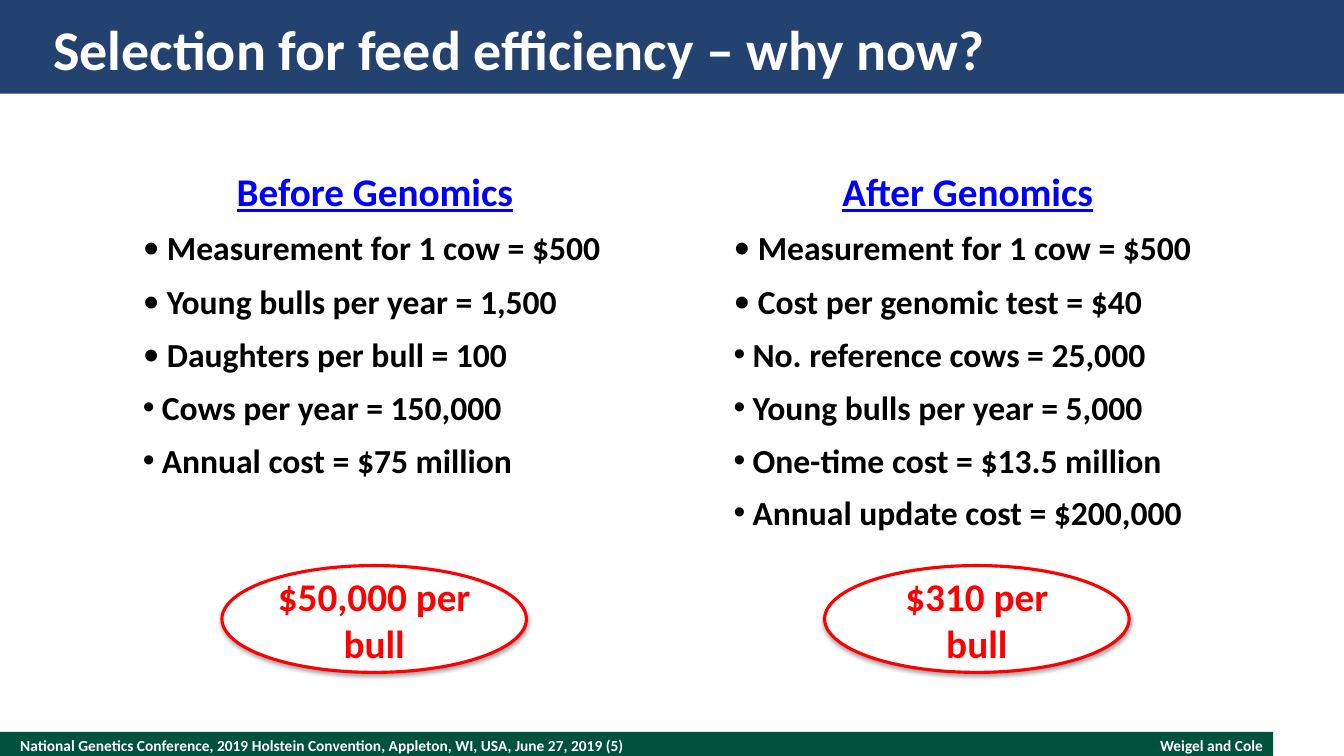
import pptx
import pptx.util
import pptx.oxml
import pptx.oxml.ns
import pptx.dml.color
import pptx.enum.shapes
import pptx.enum.text

Pt = pptx.util.Pt
ALIGN = pptx.enum.text.PP_ALIGN
ANCHOR = pptx.enum.text.MSO_ANCHOR
SHAPE = pptx.enum.shapes.MSO_SHAPE

COLORS = {"navy": "244270", "green": "00523C", "white": "FFFFFF",
          "blue": "0000FF", "black": "000000", "red": "FF0000"}
TITLE = "Selection for feed efficiency – why now?"
FOOTER_LEFT = ("National Genetics Conference, 2019 Holstein Convention, "
               "Appleton, WI, USA, June 27, 2019 (5)")
FOOTER_RIGHT = "Weigel and Cole"

# left and width of each list, its ellipse, and how many items have large bullets
COLUMNS = [
    {"heading": "Before Genomics", "left": 95, "width": 345.6,
     "large_bullets": 3, "ellipse_left": 158.5, "result": "$50,000 per bull",
     "items": ["Measurement for 1 cow = $500", "Young bulls per year = 1,500",
               "Daughters per bull = 100", "Cows per year = 150,000",
               "Annual cost = $75 million"]},
    {"heading": "After Genomics", "left": 517, "width": 348.5,
     "large_bullets": 2, "ellipse_left": 589, "result": "$310 per bull",
     "items": ["Measurement for 1 cow = $500", "Cost per genomic test = $40",
               "No. reference cows = 25,000", "Young bulls per year = 5,000",
               "One-time cost = $13.5 million", "Annual update cost = $200,000"]},
]
LIST_TOP, LINE_HEIGHT, ITEM_GAP, LAST_GAP = 116, 29.3, 9.2, 8
ELLIPSE_TOP, ELLIPSE_WIDTH, ELLIPSE_HEIGHT = 404, 217.5, 76.3
BULLETS = {"large": ("Calibri", 17.2), "small": ("Arial", 13.5)}

SHADOW = ('<a:outerShdw %s blurRad="39400" dist="22900" dir="5400000" rotWithShape="0">'
          '<a:srgbClr val="000000"><a:alpha val="35000"/></a:srgbClr></a:outerShdw>'
          % pptx.oxml.ns.nsdecls("a"))


def rgb(name):
    return pptx.dml.color.RGBColor.from_string(COLORS[name])


def write(para, text, size, color, **formats):
    span = para.add_run()
    span.text = text
    formats = {"name": "Calibri", "size": Pt(size), "bold": True, **formats}
    for key, value in formats.items():
        setattr(span.font, key, value)
    span.font.color.rgb = rgb(color)


def add_box(page, left, top, width, height, anchor=ANCHOR.MIDDLE, inset=(0, 0)):
    """Add a wrapping text box; inset is (horizontal, vertical)."""
    box = page.shapes.add_textbox(Pt(left), Pt(top), Pt(width), Pt(height))
    formats = {"word_wrap": True, "vertical_anchor": anchor,
               "margin_left": Pt(inset[0]), "margin_right": Pt(inset[0]),
               "margin_top": Pt(inset[1]), "margin_bottom": Pt(inset[1])}
    for key, value in formats.items():
        setattr(box.text_frame, key, value)
    return box


def add_line_of_text(page, place, text, size, align=ALIGN.LEFT):
    para = add_box(page, *place).text_frame.paragraphs[0]
    para.alignment = align
    write(para, text, size, "white")


def add_filled(page, kind, place, fill):
    shape = page.shapes.add_shape(kind, *map(Pt, place))
    shape.shadow.inherit = False
    shape.fill.solid()
    shape.fill.fore_color.rgb = rgb(fill)
    shape.line.fill.background()
    return shape


def set_bullet(para, style):
    font, indent = BULLETS[style]
    properties = para._p.get_or_add_pPr()
    properties.set("marL", str(Pt(indent)))
    properties.set("indent", str(-Pt(indent)))
    for tag, key, value in (("buFont", "typeface", font), ("buChar", "char", "•")):
        element = pptx.oxml.parse_xml(
            '<a:%s %s %s="%s"/>' % (tag, pptx.oxml.ns.nsdecls("a"), key, value))
        properties.append(element)


def add_list(page, column):
    items = column["items"]
    height = 41.4 + len(items) * (LINE_HEIGHT + ITEM_GAP)
    frame = add_box(page, column["left"], LIST_TOP, column["width"], height,
                    ANCHOR.TOP, (7.2, 3.6)).text_frame
    heading = frame.paragraphs[0]
    heading.alignment = ALIGN.CENTER
    write(heading, column["heading"], 28, "blue", underline=True)
    for index, item in enumerate(items):
        para = frame.add_paragraph()
        para.space_before = Pt(LAST_GAP if index == 5 else ITEM_GAP)
        set_bullet(para, "large" if index < column["large_bullets"] else "small")
        write(para, item, 24, "black")


def add_result(page, column):
    place = (column["ellipse_left"], ELLIPSE_TOP, ELLIPSE_WIDTH, ELLIPSE_HEIGHT)
    ellipse = add_filled(page, SHAPE.OVAL, place, "white")
    ellipse.line.color.rgb = rgb("red")
    ellipse.line.width = Pt(2.25)
    effects = ellipse._element.spPr.find(pptx.oxml.ns.qn("a:effectLst"))
    effects.append(pptx.oxml.parse_xml(SHADOW))
    ellipse.text_frame.word_wrap = True
    ellipse.text_frame.vertical_anchor = ANCHOR.MIDDLE
    para = ellipse.text_frame.paragraphs[0]
    para.alignment = ALIGN.CENTER
    write(para, column["result"], 28, "red")


def main():
    deck = pptx.Presentation()
    deck.slide_width, deck.slide_height = Pt(960), Pt(540)
    page = deck.slides.add_slide(deck.slide_layouts[6])
    add_filled(page, SHAPE.RECTANGLE, (0, 522.7, 909.4, 17.3), "green")
    add_filled(page, SHAPE.RECTANGLE, (0, 0, 960, 67), "navy")
    add_line_of_text(page, (14.4, 525.6, 624, 13.7), FOOTER_LEFT, 11)
    add_line_of_text(page, (691.2, 525.6, 211, 13.7), FOOTER_RIGHT, 11, ALIGN.RIGHT)
    for column in COLUMNS:
        add_list(page, column)
        add_result(page, column)
    add_line_of_text(page, (38.2, 9.4, 883.4, 50.4), TITLE, 40)
    deck.save("out.pptx")


if __name__ == "__main__":
    main()
